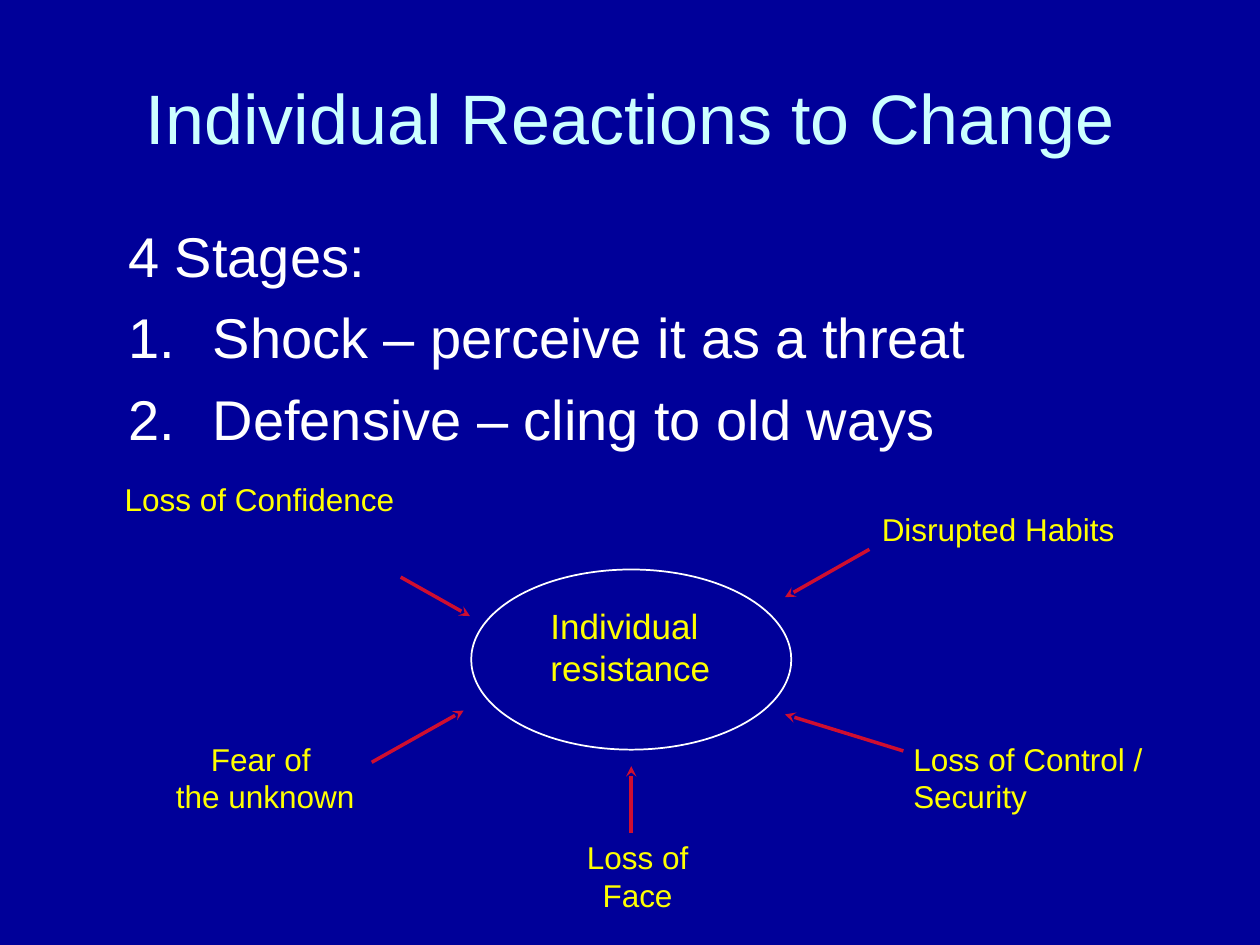
from lxml import etree
from pptx import Presentation, util as u
from pptx.dml.color import RGBColor
from pptx.enum import shapes, text
from pptx.oxml.ns import qn

PX = 9144  # EMU per px, 100 px to the inch
FONT = "Arial"
COLORS = {"navy": "000099", "title": "CCFFFF", "body": "FFFFFF",
          "label": "FFFF00", "arrow": "CF0E30"}
LEFT, CENTER = text.PP_ALIGN.LEFT, text.PP_ALIGN.CENTER


def rgb(name):
    return RGBColor.from_string(COLORS[name])


def px(*values):
    return [v * PX for v in values]


def add_text(s, box, lines, size, color, align=LEFT, wrap=True):
    sp = s.shapes.add_textbox(*px(*box))
    tf = sp.text_frame
    tf.word_wrap = wrap
    for i, line in enumerate(lines):
        p = tf.paragraphs[0] if i == 0 else tf.add_paragraph()
        p.text = line
        p.alignment = align
        p.font.size = u.Pt(size)
        p.font.name = FONT
        p.font.color.rgb = rgb(color)
    return sp


def add_label(s, box, lines, size=18, align=LEFT):
    sp = add_text(s, box, lines, size, "label", align, wrap=False)
    sp.fill.solid()
    sp.fill.fore_color.rgb = rgb("navy")


def add_arrow(s, start, end):
    c = s.shapes.add_connector(shapes.MSO_CONNECTOR.STRAIGHT, *px(*start, *end))
    c.line.color.rgb = rgb("arrow")
    c.line.width = u.Pt(2)
    etree.SubElement(c.line._get_or_add_ln(), qn("a:tailEnd"), type="stealth")
    etree.SubElement(c._element.spPr, qn("a:effectLst"))


def title(s, box):
    sp = add_text(s, box, ["Individual Reactions to Change"], 40, "title", CENTER)
    sp.text_frame.vertical_anchor = text.MSO_ANCHOR.MIDDLE


def stages(s, box):
    lines = ["4 Stages:", "Shock – perceive it as a threat",
             "Defensive – cling to old ways"]
    tf = add_text(s, box, lines, 32, "body").text_frame
    tf.margin_top = 9 * PX
    # Hanging indent for all lines, numbers after the heading
    for i, p in enumerate(tf.paragraphs):
        pPr = p._p.get_or_add_pPr()
        pPr.set("marL", str(67 * PX))
        pPr.set("indent", str(-67 * PX))
        if i:
            p.space_before = u.Pt(8)
            num = etree.Element(qn("a:buAutoNum"), type="arabicPeriod")
            pPr.insert_element_before(num, "a:tabLst", "a:defRPr", "a:extLst")


def resistance_diagram(s, box):
    x0, y0 = box[:2]

    def at(x, y, *size):
        return (x0 + x, y0 + y, *size)

    # Causes of resistance
    causes = [
        ((0, 0, 236, 40), ["Loss of Confidence"], CENTER),
        ((602, 24, 207, 40), ["Disrupted Habits"], LEFT),
        ((41, 206, 163, 71), ["Fear of ", "the unknown"], CENTER),
        ((367, 284, 102, 71), ["Loss of", "Face"], CENTER),
        ((627, 206, 204, 71), ["Loss of Control /", "Security"], LEFT),
    ]
    for rect, lines, align in causes:
        add_label(s, at(*rect), lines, align=align)

    # Central ellipse
    sp = s.shapes.add_shape(shapes.MSO_SHAPE.OVAL, *px(*at(286, 76, 254, 143)))
    sp.shadow.inherit = False
    sp.fill.solid()
    sp.fill.fore_color.rgb = rgb("navy")
    sp.line.color.rgb = rgb("body")
    sp.line.width = u.Pt(1)
    add_label(s, at(339, 99, 148, 77), ["Individual", "resistance"], 20)

    # Arrows from the causes to the centre
    arrows = [((629, 220), (535, 191)), ((230, 82), (285, 113)),
              ((207, 229), (280, 188)), ((413, 285), (413, 232)),
              ((602, 60), (535, 98))]
    for start, end in arrows:
        add_arrow(s, at(*start), at(*end))


def main():
    prs = Presentation()
    prs.slide_width, prs.slide_height = px(1000, 750)
    s = prs.slides.add_slide(prs.slide_layouts[6])
    s.background.fill.solid()
    s.background.fill.fore_color.rgb = rgb("navy")
    title(s, (50, 30, 900, 125))
    stages(s, (92, 167, 850, 450))
    resistance_diagram(s, (88, 376, 831, 355))
    prs.save("out.pptx")


if __name__ == "__main__":
    main()
